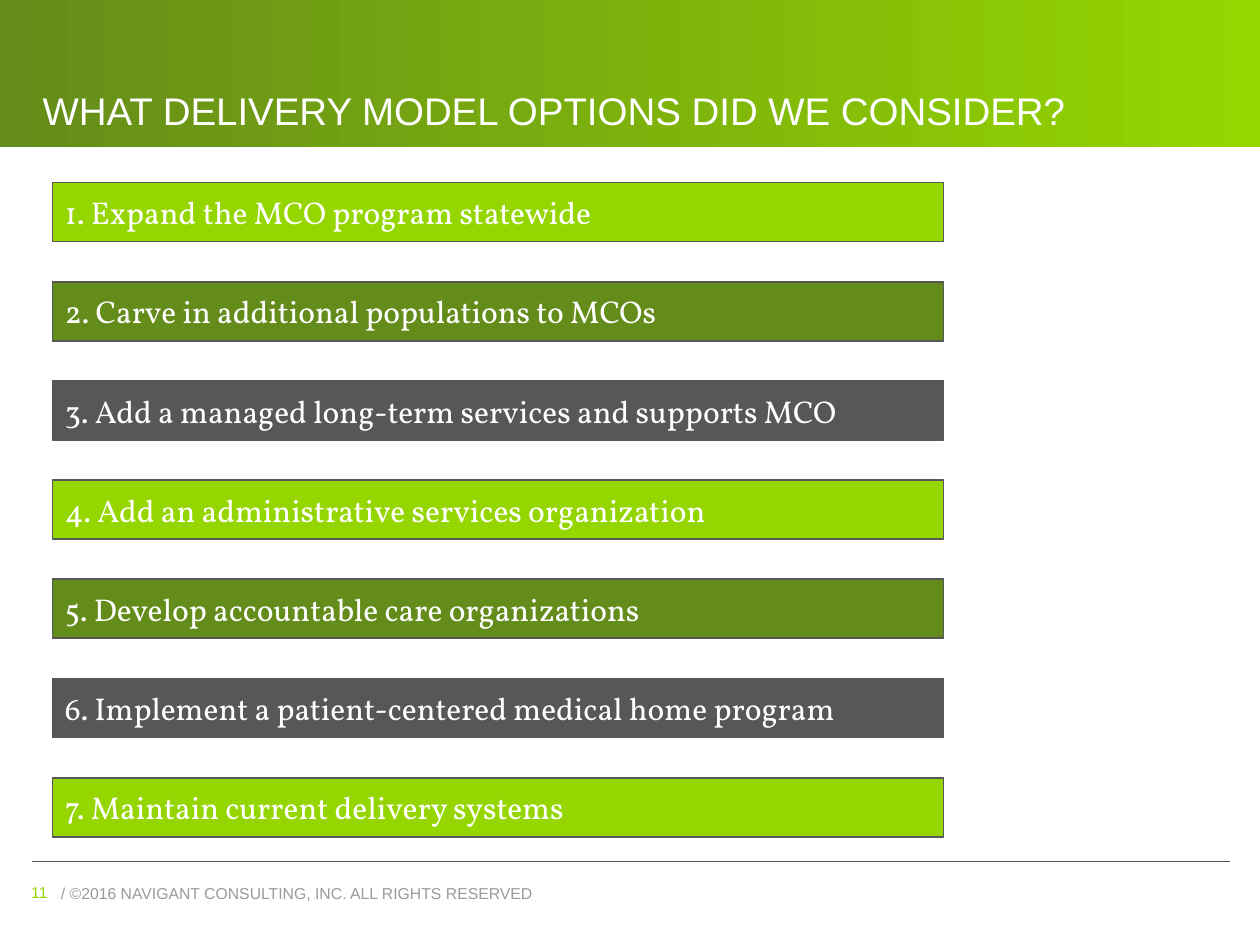
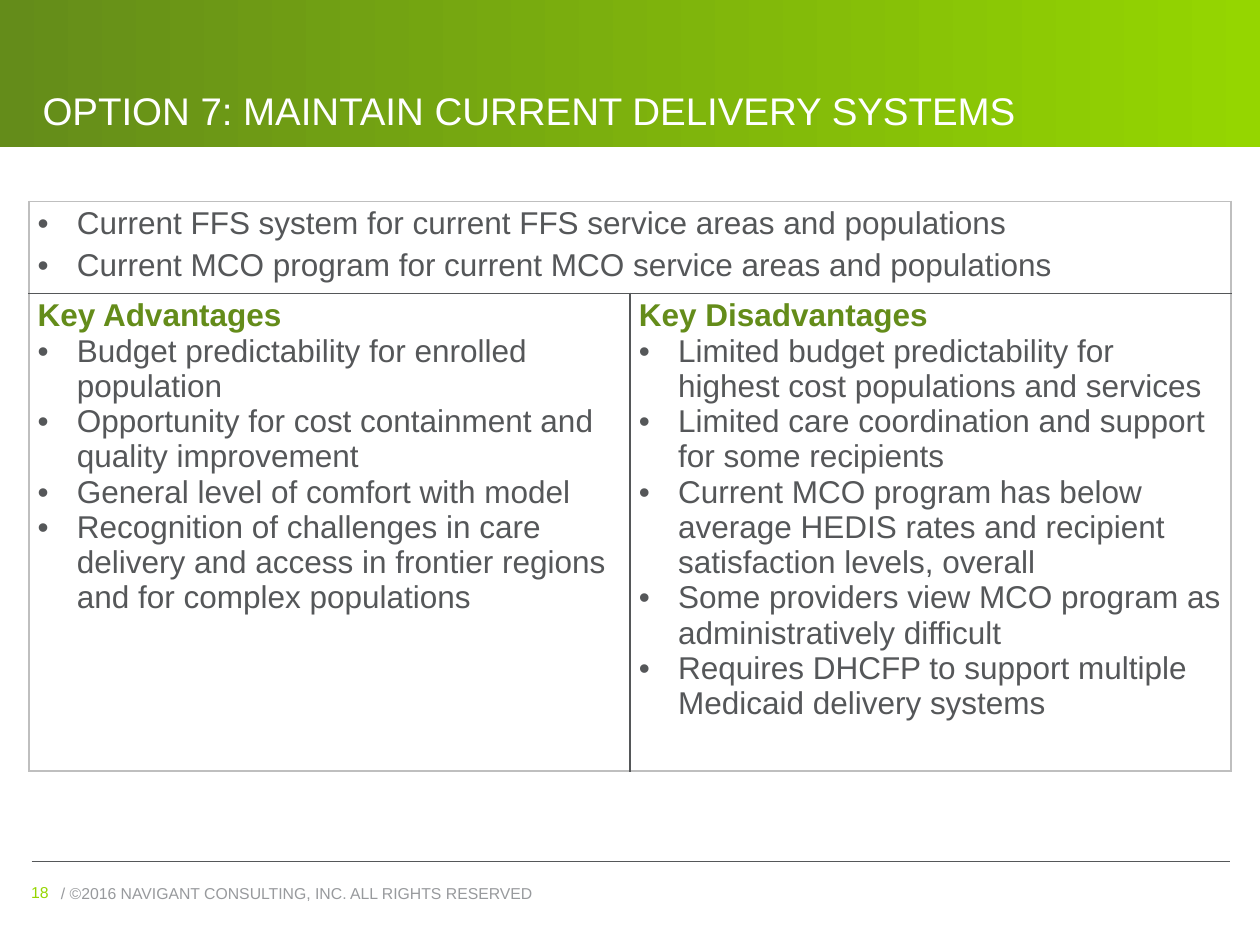
"""Build two slides on health care delivery model options."""
from dataclasses import dataclass
from itertools import cycle
from typing import Any, NamedTuple

from lxml.etree import SubElement
from pptx import Presentation
from pptx.dml.color import RGBColor
from pptx.enum.shapes import MSO_CONNECTOR, MSO_SHAPE
from pptx.enum.text import MSO_ANCHOR, PP_ALIGN
from pptx.oxml import parse_xml
from pptx.oxml.ns import nsdecls, qn
from pptx.util import Cm, Pt


@dataclass(frozen=True)
class Theme:
    lime: str = "95D600"
    olive: str = "648C1A"
    slate: str = "555759"
    gray: str = "989A9D"
    edge: str = "BFBFBF"
    white: str = "FFFFFF"
    sans: str = "Arial"
    serif: str = "Vollkorn"
    title: float = 22
    body: float = 18
    footer: float = 9


class Box(NamedTuple):
    left: float
    top: float
    width: float
    height: float

    def cm(self) -> list[Cm]:
        return [Cm(v) for v in self]


class Style(NamedTuple):
    size: float
    color: str
    font: str
    bold: bool = False


class Para(NamedTuple):
    text: str
    style: Style
    bullet: bool = False
    before: float = 0


T = Theme()
TITLE = Style(T.title, T.white, T.sans)
OPTION = Style(T.body, T.white, T.serif)
BODY = Style(T.body, T.slate, T.sans)
HEADING = Style(T.body, T.olive, T.sans, True)
NUMBER = Style(T.footer, T.lime, T.sans)
CREDIT = Style(T.footer, T.gray, T.sans)

BAND = Box(0, 0, 25.4, 2.97)
TITLE_BOX = Box(0.61, 0, 24.21, 2.82)
NUMBER_BOX = Box(0.38, 17.68, 1.73, 0.58)
CREDIT_BOX = Box(0.98, 17.7, 16.18, 0.56)
FIRST_OPTION = Box(1.06, 3.68, 17.96, 1.19)
OPTION_PITCH = 2.0
TABLE_BOX = Box(0.58, 4.06, 24.24, 11.43)
ROW_HEIGHTS = (1.8, 9.63)
BULLET_INDENT = 0.79

OPTIONS = (
    "Expand the MCO program statewide",
    "Carve in additional populations to MCOs",
    "Add a managed long-term services and supports MCO",
    "Add an administrative services organization",
    "Develop accountable care organizations",
    "Implement a patient-centered medical home program",
    "Maintain current delivery systems",
)
SUMMARY = (
    "Current FFS system for current FFS service areas and populations",
    "Current MCO program for current MCO service areas and populations",
)
ADVANTAGES = (
    "Budget predictability for enrolled population",
    "Opportunity for cost containment and quality improvement",
    "General level of comfort with model",
    "Recognition of challenges in care delivery and access in frontier regions "
    "and for complex populations",
)
DISADVANTAGES = (
    "Limited budget predictability for highest cost populations and services",
    "Limited care coordination and support for some recipients",
    "Current MCO program has below average HEDIS rates and recipient "
    "satisfaction levels, overall",
    "Some providers view MCO program as administratively difficult",
    "Requires DHCFP to support multiple Medicaid delivery systems",
)


def rgb(color: str) -> RGBColor:
    return RGBColor.from_string(color)


def apply(obj: Any, values: dict[str, Any]) -> None:
    for name, value in values.items():
        setattr(obj, name, value)


def add_bullet(p: Any) -> None:
    pPr = p._p.get_or_add_pPr()
    indent = Cm(BULLET_INDENT)
    pPr.set("marL", str(indent))
    pPr.set("indent", str(-indent))
    SubElement(pPr, qn("a:buFont"), typeface=T.sans)
    SubElement(pPr, qn("a:buChar"), char="•")


def write(tf: Any, paras: list[Para], anchor: MSO_ANCHOR = MSO_ANCHOR.TOP) -> None:
    apply(tf, {"word_wrap": True, "vertical_anchor": anchor})
    for i, para in enumerate(paras):
        p = tf.add_paragraph() if i else tf.paragraphs[0]
        p.alignment = PP_ALIGN.LEFT
        if para.bullet:
            add_bullet(p)
        if i and para.before:
            p.space_before = Pt(para.before)
        r = p.add_run()
        r.text = para.text
        size, color, font, bold = para.style
        apply(r.font, {"size": Pt(size), "name": font, "bold": bold})
        r.font.color.rgb = rgb(color)


def add_text(s: Any, box: Box, text: str, style: Style,
             anchor: MSO_ANCHOR = MSO_ANCHOR.TOP) -> None:
    write(s.shapes.add_textbox(*box.cm()).text_frame, [Para(text, style)], anchor)


def add_rect(s: Any, box: Box) -> Any:
    sp = s.shapes.add_shape(MSO_SHAPE.RECTANGLE, *box.cm())
    sp.shadow.inherit = False
    return sp


def add_base(prs: Any, title: str, number: int) -> Any:
    s = prs.slides.add_slide(prs.slide_layouts[6])
    rule = s.shapes.add_connector(MSO_CONNECTOR.STRAIGHT,
                                  Cm(0.64), Cm(17.37), Cm(24.79), Cm(17.37))
    rule.line.color.rgb = rgb(T.slate)
    rule.line.width = Pt(0.75)
    SubElement(rule._element.spPr, qn("a:effectLst"))
    band = add_rect(s, BAND)
    band.line.fill.background()
    band.fill.gradient()
    band.fill.gradient_angle = 0
    for stop, color in zip(band.fill.gradient_stops, (T.olive, T.lime)):
        stop.color.rgb = rgb(color)
    add_text(s, CREDIT_BOX, "/ ©2016 NAVIGANT CONSULTING, INC. ALL RIGHTS RESERVED", CREDIT)
    add_text(s, NUMBER_BOX, str(number), NUMBER)
    add_text(s, TITLE_BOX, title, TITLE, MSO_ANCHOR.BOTTOM)
    return s


def add_options(s: Any) -> None:
    for i, (text, color) in enumerate(zip(OPTIONS, cycle((T.lime, T.olive, T.slate)))):
        bar = add_rect(s, FIRST_OPTION._replace(top=FIRST_OPTION.top + i * OPTION_PITCH))
        bar.fill.solid()
        bar.fill.fore_color.rgb = rgb(color)
        bar.line.color.rgb = rgb(T.slate)
        bar.line.width = Pt(1)
        write(bar.text_frame, [Para(f"{i + 1}. {text}", OPTION)], MSO_ANCHOR.MIDDLE)


def set_borders(cell: Any, outer: dict[str, bool]) -> None:
    tcPr = cell._tc.get_or_add_tcPr()
    for i, (side, is_outer) in enumerate(outer.items()):
        color = T.edge if is_outer else T.slate
        tcPr.insert(i, parse_xml(
            f'<a:ln{side} {nsdecls("a")} w="{Pt(1)}"><a:solidFill>'
            f'<a:srgbClr val="{color}"/></a:solidFill></a:ln{side}>'))


def add_comparison(s: Any) -> None:
    table = s.shapes.add_table(2, 2, *TABLE_BOX.cm()).table
    apply(table, {"first_row": False, "horz_banding": False})
    for column in table.columns:
        column.width = Cm(TABLE_BOX.width / 2)
    for row, height in zip(table.rows, ROW_HEIGHTS):
        row.height = Cm(height)
    table.cell(0, 0).merge(table.cell(0, 1))
    contents = {
        (0, 0): [Para(text, BODY, True, 3.6) for text in SUMMARY],
        (1, 0): [Para("Key Advantages", HEADING)] + [Para(t, BODY, True) for t in ADVANTAGES],
        (1, 1): [Para("Key Disadvantages", HEADING)] + [Para(t, BODY, True) for t in DISADVANTAGES],
    }
    margins = {"margin_left": Cm(0.18), "margin_right": Cm(0.18),
               "margin_top": Cm(0.1), "margin_bottom": Cm(0.1)}
    for r in range(2):
        for c in range(2):
            cell = table.cell(r, c)
            apply(cell, margins)
            cell.fill.solid()
            cell.fill.fore_color.rgb = rgb(T.white)
            right = c + (cell.span_width if cell.is_merge_origin else 1)
            set_borders(cell, {"L": c == 0, "R": right == 2, "T": r == 0, "B": r == 1})
            if (r, c) in contents:
                write(cell.text_frame, contents[r, c])


def main() -> None:
    prs = Presentation()
    apply(prs, {"slide_width": Cm(25.4), "slide_height": Cm(19.05)})
    add_options(add_base(prs, "WHAT DELIVERY MODEL OPTIONS DID WE CONSIDER?", 11))
    add_comparison(add_base(prs, "OPTION 7: MAINTAIN CURRENT DELIVERY SYSTEMS", 18))
    prs.save("out.pptx")


if __name__ == "__main__":
    main()
